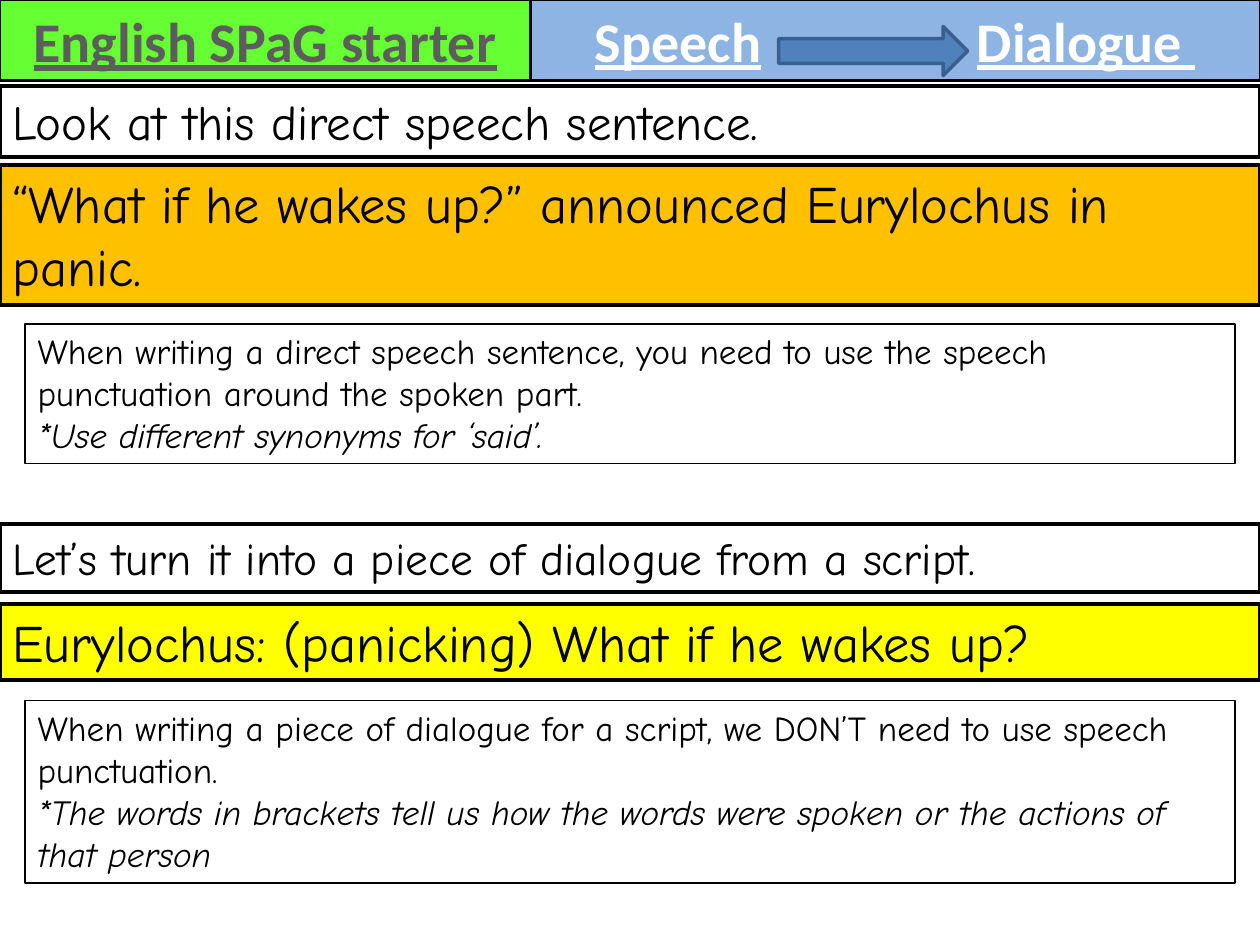
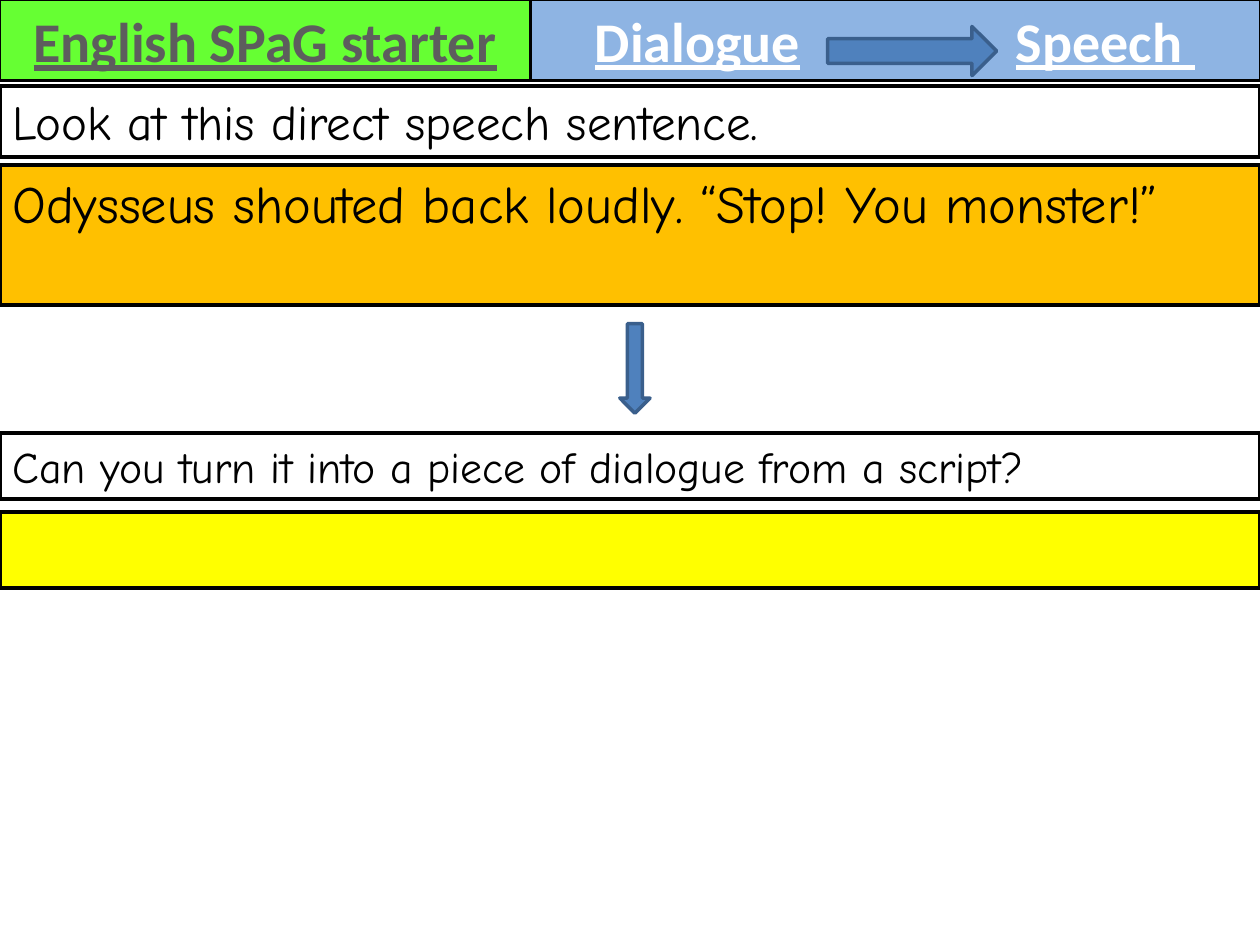
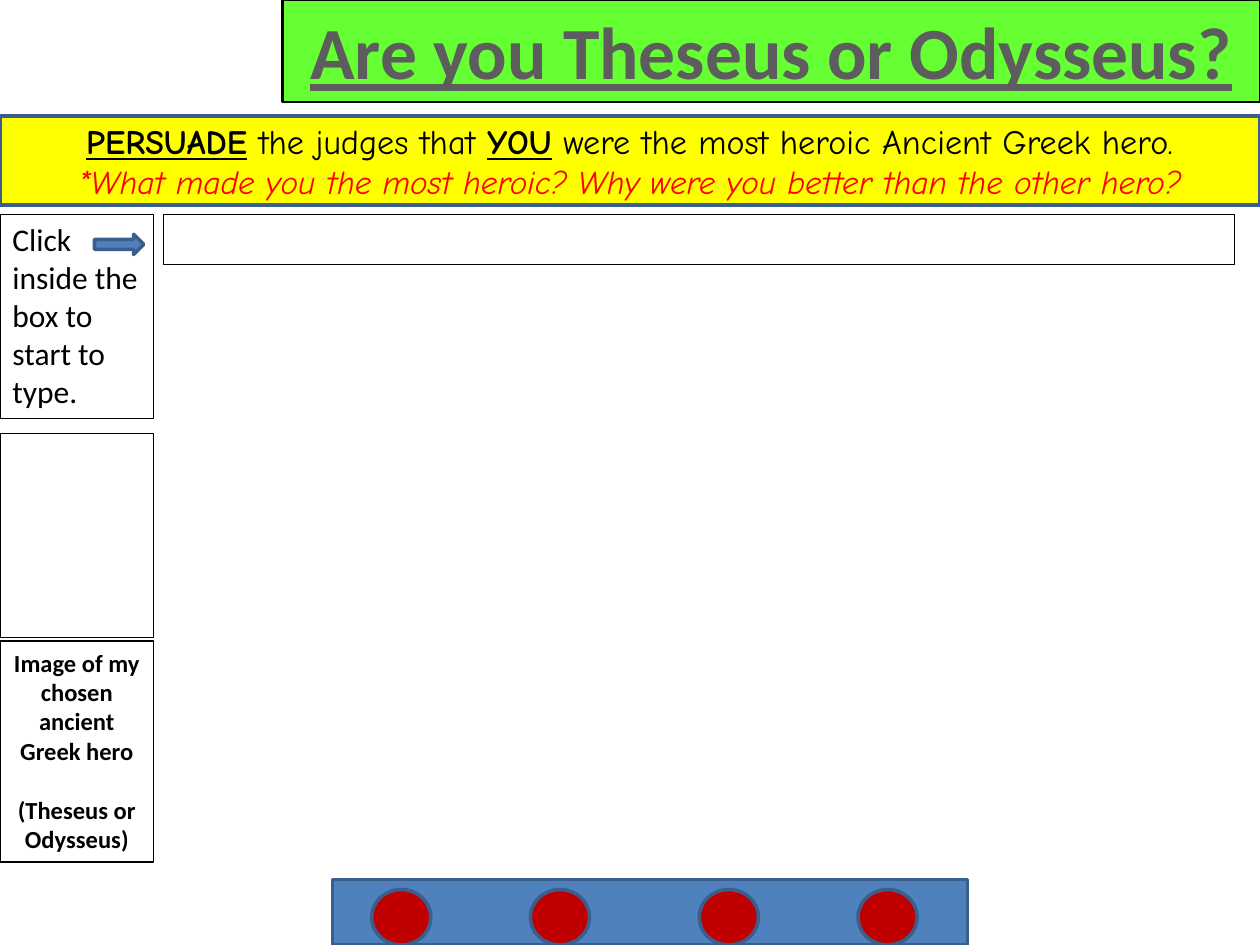
import lxml.etree
import pptx
import pptx.dml.color
import pptx.enum.shapes
import pptx.enum.text
import pptx.oxml.ns
import pptx.util

Pt = pptx.util.Pt
SHAPES = pptx.enum.shapes.MSO_SHAPE
ALIGN = pptx.enum.text.PP_ALIGN
ANCHOR = pptx.enum.text.MSO_ANCHOR

BLACK = "000000"
WHITE = "FFFFFF"
GREY = "5D5D5D"
RED = "FF0000"
DARK_RED = "C00000"
GREEN = "66FF33"
LIGHT_BLUE = "8EB4E3"
BLUE = "4F81BD"
DARK_BLUE = "3A5F8C"
ORANGE = "FFC000"
YELLOW = "FFFF00"

PLAIN = "Calibri"
HAND = "Comic Neue"

PAGE_WIDTH = 720
PAGE_HEIGHT = 540
TITLE_WIDTH = 303.1
HEADER_HEIGHT = 46.1
NOTE_LEFT = 14.4
SIDE_WIDTH = 87.8
SIDE_HEIGHT = 116.6


def color(value):
    return pptx.dml.color.RGBColor.from_string(value)


def paint(shape, fill, line, weight):
    if fill:
        shape.fill.solid()
        shape.fill.fore_color.rgb = color(fill)
    else:
        shape.fill.background()
    shape.line.color.rgb = color(line)
    shape.line.width = Pt(weight)


def add_shape(page, kind, left, top, width, height, fill=None, line=BLACK, weight=2.25):
    shape = page.shapes.add_shape(kind, Pt(left), Pt(top), Pt(width), Pt(height))
    shape.shadow.inherit = False
    paint(shape, fill, line, weight)
    return shape


def set_frame(shape, anchor=ANCHOR.TOP):
    frame = shape.text_frame
    frame.word_wrap = True
    frame.auto_size = pptx.enum.text.MSO_AUTO_SIZE.NONE
    frame.vertical_anchor = anchor
    return frame


def add_span(para, text, size=20, font=HAND, ink=BLACK, bold=False, italic=False, underline=False):
    span = para.add_run()
    span.text = text
    span.font.size = Pt(size)
    span.font.name = font
    span.font.color.rgb = color(ink)
    span.font.bold = bold
    span.font.italic = italic
    span.font.underline = underline


def first_para(shape, align=ALIGN.LEFT, anchor=ANCHOR.TOP):
    para = set_frame(shape, anchor).paragraphs[0]
    para.alignment = align
    return para


def next_para(shape, align=ALIGN.LEFT, space_before=0):
    para = shape.text_frame.add_paragraph()
    para.alignment = align
    para.space_before = Pt(space_before)
    return para


def add_title(page, text, left, width, height, size):
    title = page.shapes.title
    title.left, title.top, title.width, title.height = Pt(left), Pt(0), Pt(width), Pt(height)
    paint(title, GREEN, BLACK, 1.5)
    add_span(first_para(title, ALIGN.CENTER), text, size=size, font=PLAIN, ink=GREY,
             bold=True, underline=True)


def add_arrow(page, left, top, width, height, kind=SHAPES.RIGHT_ARROW):
    add_shape(page, kind, left, top, width, height, BLUE, DARK_BLUE, 2)


def add_strip(page, text, top, height, size, fill=None):
    strip = add_shape(page, SHAPES.RECTANGLE, 0, top, PAGE_WIDTH, height, fill)
    if text:
        add_span(first_para(strip), text, size=size)


def add_note(page, rule, tip, top, height):
    width = PAGE_WIDTH - 2 * NOTE_LEFT
    note = add_shape(page, SHAPES.RECTANGLE, NOTE_LEFT, top, width, height, weight=1)
    add_span(first_para(note), rule)
    add_span(next_para(note), tip, italic=True)


def add_topic(page, source, target, target_offset):
    topic = add_shape(page, SHAPES.RECTANGLE, TITLE_WIDTH, 0, PAGE_WIDTH - TITLE_WIDTH,
                      HEADER_HEIGHT, LIGHT_BLUE, weight=1.5)
    para = first_para(topic)
    topic.text_frame.margin_left = Pt(36.8)
    qn = pptx.oxml.ns.qn
    stops = lxml.etree.SubElement(para._p.get_or_add_pPr(), qn("a:tabLst"))
    lxml.etree.SubElement(stops, qn("a:tab"), pos=str(int(Pt(target_offset))), algn="l")
    add_span(para, f"{source}\t{target} ", size=32, font=PLAIN, ink=WHITE,
             bold=True, underline=True)


def add_starter(deck, source, target, target_offset, arrow_left, arrow_width, sentence):
    page = deck.slides.add_slide(deck.slide_layouts[5])
    add_title(page, "English SPaG starter", 0, TITLE_WIDTH, HEADER_HEIGHT, 32)
    add_topic(page, source, target, target_offset)
    add_arrow(page, arrow_left, 15.1, arrow_width, 28.1)
    add_strip(page, "Look at this direct speech sentence.", 49, 41, 28)
    add_strip(page, sentence, 94.3, 79.9, 30, ORANGE)
    return page


def build_example(deck):
    page = add_starter(deck, "Speech", "Dialogue", 218.3, 445, 108,
                       "“What if he wakes up?” announced Eurylochus in panic.")
    add_note(page, "When writing a direct speech sentence, you need to use the speech "
             "punctuation around the spoken part.",
             "*Use different synonyms for ‘said’.", 185, 79.9)
    add_strip(page, "Let’s turn it into a piece of dialogue from a script.", 299.5, 38.9, 26)
    add_strip(page, "Eurylochus: (panicking) What if he wakes up?", 344.9, 43.9, 30, YELLOW)
    add_note(page, "When writing a piece of dialogue for a script, we DON’T need to use "
             "speech punctuation.",
             "*The words in brackets tell us how the words were spoken or the actions of "
             "that person", 400.3, 104.4)


def build_exercise(deck):
    page = add_starter(deck, "Dialogue", "Speech", 240.6, 473, 96.5,
                       "Odysseus shouted back loudly. “Stop! You monster!”")
    add_arrow(page, 354.2, 185, 17.3, 51.1, SHAPES.DOWN_ARROW)
    add_strip(page, "Can you turn it into a piece of dialogue from a script?", 247.7, 37.4, 25)
    add_strip(page, None, 292.3, 43.9, 30, YELLOW)


def add_task(page):
    task = add_shape(page, SHAPES.RECTANGLE, 0, 66.2, PAGE_WIDTH, 51.1, YELLOW, DARK_BLUE, 2)
    para = first_para(task, ALIGN.CENTER, ANCHOR.MIDDLE)
    for text, strong in (("PERSUADE", True), (" the judges that ", False), ("YOU", True),
                         (" were the most heroic Ancient Greek hero.", False)):
        add_span(para, text, size=19.5, bold=strong, underline=strong)
    add_span(next_para(task, ALIGN.CENTER),
             "*What made you the most heroic? Why were you better than the other hero?",
             size=19, ink=RED, italic=True)


def add_side_boxes(page):
    prompt = add_shape(page, SHAPES.RECTANGLE, 0, 122.4, SIDE_WIDTH, SIDE_HEIGHT, weight=0.5)
    add_span(first_para(prompt), "Click inside the box to start to type.", size=18, font=PLAIN)
    add_shape(page, SHAPES.RECTANGLE, 0, 247.7, SIDE_WIDTH, SIDE_HEIGHT, weight=1)
    caption = add_shape(page, SHAPES.RECTANGLE, 0, 366.5, SIDE_WIDTH, 126, weight=1)
    add_span(first_para(caption, ALIGN.CENTER), "Image of my chosen ancient Greek hero",
             size=14, font=PLAIN, bold=True)
    add_span(next_para(caption, ALIGN.CENTER, 17), "(Theseus or Odysseus)",
             size=14, font=PLAIN, bold=True)


def build_persuasion(deck):
    page = deck.slides.add_slide(deck.slide_layouts[5])
    add_title(page, "Are you Theseus or Odysseus?", 161.3, PAGE_WIDTH - 161.3, 58.3, 42)
    add_shape(page, SHAPES.RECTANGLE, 190.1, 502.6, 362.9, 37.4, BLUE, DARK_BLUE, 2)
    for left in (212.4, 303.1, 399.6, 490.3):
        add_shape(page, SHAPES.OVAL, left, 508.3, 33.8, 31.7, DARK_RED, DARK_BLUE, 2)
    add_task(page)
    add_side_boxes(page)
    add_shape(page, SHAPES.RECTANGLE, 93.6, 122.4, 612, 28.8, weight=0.75)
    add_arrow(page, 54, 133.9, 28.1, 11.5)


def main():
    deck = pptx.Presentation()
    deck.slide_width = Pt(PAGE_WIDTH)
    deck.slide_height = Pt(PAGE_HEIGHT)
    build_example(deck)
    build_exercise(deck)
    build_persuasion(deck)
    deck.save("out.pptx")


if __name__ == "__main__":
    main()
